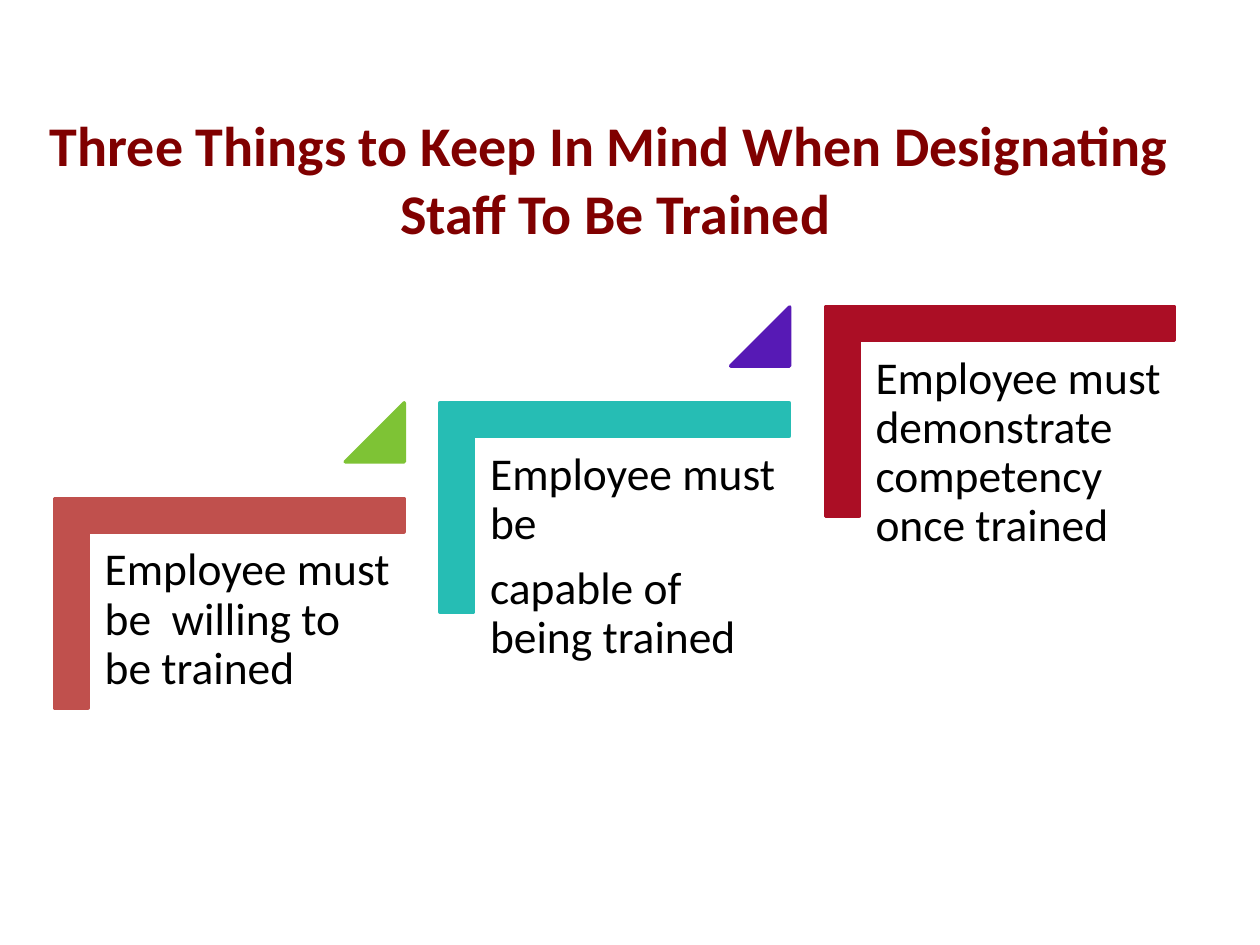
from dataclasses import dataclass

from pptx import Presentation
from pptx.dml.color import RGBColor
from pptx.enum.shapes import MSO_SHAPE
from pptx.enum.text import MSO_ANCHOR, MSO_AUTO_SIZE, PP_ALIGN
from pptx.shapes.autoshape import Shape
from pptx.slide import Slide
from pptx.util import Cm, Pt


@dataclass(frozen=True)
class Theme:
    font: str = "Calibri"
    title_size: float = 32
    body_size: float = 26
    paragraph_gap: float = 9.1
    outline: float = 2
    title_color: str = "800000"
    body_color: str = "000000"


@dataclass(frozen=True)
class Step:
    paragraphs: tuple[str, ...]
    color: str
    triangle_color: str | None = None


THEME = Theme()
TITLE = "Three Things to Keep In Mind When Designating \vStaff To Be Trained"
STEPS = (
    Step(("Employee must be  willing to be trained",), "C0504D", "7EC335"),
    Step(("Employee must be", "capable of being trained"), "26BDB4", "5719B5"),
    Step(("Employee must demonstrate competency once trained",), "AB0E25"),
)
STEP_RIGHT, STEP_UP = 7.77, 1.93


def paint(shape: Shape, color: str) -> None:
    shape.shadow.inherit = False
    shape.fill.solid()
    shape.fill.fore_color.rgb = RGBColor.from_string(color)
    shape.line.color.rgb = RGBColor.from_string(color)
    shape.line.width = Pt(THEME.outline)


def add_title(slide: Slide) -> None:
    title = slide.shapes.title
    title.left, title.top = Cm(0.43), Cm(1.47)
    title.width, title.height = Cm(23.95), Cm(4.24)
    frame = title.text_frame
    frame.text = TITLE
    frame.auto_size = MSO_AUTO_SIZE.NONE
    frame.vertical_anchor = MSO_ANCHOR.MIDDLE
    heading = frame.paragraphs[0]
    heading.alignment = PP_ALIGN.CENTER
    heading.font.name = THEME.font
    heading.font.size = Pt(THEME.title_size)
    heading.font.bold = True
    heading.font.color.rgb = RGBColor.from_string(THEME.title_color)


def add_step_text(slide: Slide, step: Step, x: float, y: float) -> None:
    frame = slide.shapes.add_textbox(Cm(x), Cm(y), Cm(6.35), Cm(5.56)).text_frame
    frame.word_wrap = True
    frame.margin_left = frame.margin_right = Cm(0.28)
    frame.margin_top = frame.margin_bottom = Cm(0.28)
    frame.text = "\n".join(step.paragraphs)
    for paragraph in frame.paragraphs:
        paragraph.line_spacing = 0.9
        paragraph.space_after = Pt(THEME.paragraph_gap)
        paragraph.font.name = THEME.font
        paragraph.font.size = Pt(THEME.body_size)
        paragraph.font.color.rgb = RGBColor.from_string(THEME.body_color)


def add_step(slide: Slide, step: Step, index: int) -> None:
    """Draw one stair of the staircase, each further right and higher."""
    dx, dy = index * STEP_RIGHT, -index * STEP_UP
    corner = slide.shapes.add_shape(
        MSO_SHAPE.CORNER, Cm(2.51 + dx), Cm(8.64 + dy), Cm(4.22), Cm(7.04))
    corner.rotation = 90
    corner.adjustments[0] = corner.adjustments[1] = 0.16
    paint(corner, step.color)
    add_step_text(slide, step, 1.83 + dx, 10.74 + dy)
    if step.triangle_color:
        triangle = slide.shapes.add_shape(
            MSO_SHAPE.ISOSCELES_TRIANGLE,
            Cm(6.96 + dx), Cm(8.12 + dy), Cm(1.19), Cm(1.19))
        triangle.adjustments[0] = 1
        paint(triangle, step.triangle_color)


def main() -> None:
    presentation = Presentation()
    presentation.slide_width, presentation.slide_height = Cm(25.4), Cm(19.05)
    slide = presentation.slides.add_slide(presentation.slide_layouts[5])
    add_title(slide)
    for index, step in enumerate(STEPS):
        add_step(slide, step, index)
    presentation.save("out.pptx")


if __name__ == "__main__":
    main()
